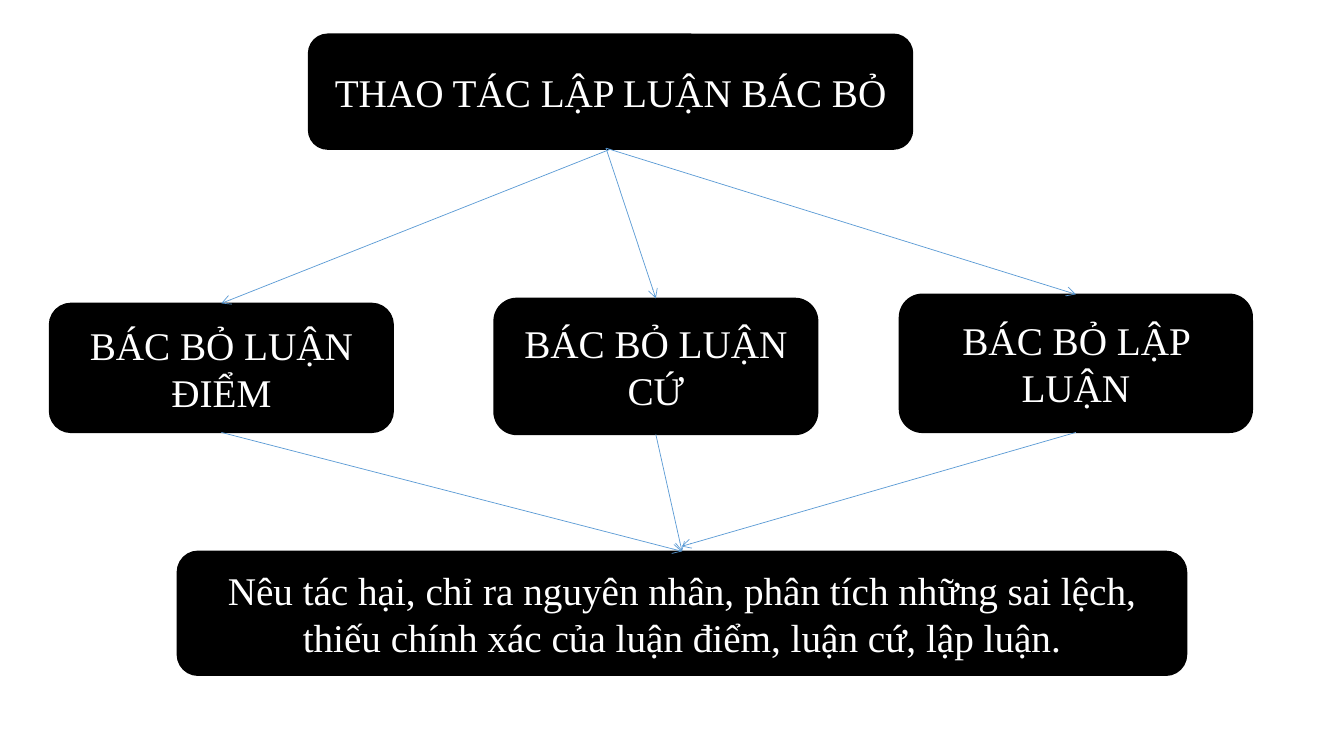
"""Draw a diagram of the ways to refute an argument."""
from dataclasses import dataclass
from typing import Any, Optional

from lxml.etree import SubElement
from pptx import Presentation
from pptx.dml.color import RGBColor
from pptx.enum.shapes import MSO_CONNECTOR, MSO_SHAPE
from pptx.enum.text import MSO_ANCHOR, PP_ALIGN
from pptx.oxml.ns import qn
from pptx.util import Inches, Pt

WIDTH, HEIGHT = Inches(13.33), Inches(7.5)
TOP, BOTTOM = 0, 2


@dataclass(frozen=True)
class Theme:
    box: RGBColor = RGBColor(0x00, 0x00, 0x00)
    text: RGBColor = RGBColor(0xFF, 0xFF, 0xFF)
    arrow: RGBColor = RGBColor(0x5B, 0x9B, 0xD5)
    font: str = "Times New Roman"
    size: Pt = Pt(28)
    border: Pt = Pt(1)
    stroke: Pt = Pt(0.5)


@dataclass(frozen=True)
class Box:
    name: str
    text: str
    left: float
    top: float
    width: float
    height: float


@dataclass(frozen=True)
class Link:
    source: str
    target: str
    free_start: Optional[tuple[float, float]] = None
    free_end: Optional[tuple[float, float]] = None


THEME = Theme()
FRAME_FORMAT = {"word_wrap": True, "vertical_anchor": MSO_ANCHOR.MIDDLE}
FONT_FORMAT = {"name": THEME.font, "size": THEME.size}

BOXES = [
    Box("root", "THAO TÁC LẬP LUẬN BÁC BỎ", 22.96, 4.53, 44.94, 15.2),
    Box("thesis", "BÁC BỎ LUẬN ĐIỂM", 3.68, 40.13, 25.58, 17.07),
    Box("evidence", "BÁC BỎ LUẬN CỨ", 36.76, 39.47, 24.08, 18),
    Box("reasoning", "BÁC BỎ LẬP LUẬN", 66.92, 38.93, 26.26, 18.27),
    Box("method", "Nêu tác hại, chỉ ra nguyên nhân, phân tích những sai lệch, "
        "thiếu chính xác của luận điểm, luận cứ, lập luận.",
        13.2, 72.93, 75.09, 16.4),
]
FORK = (45.09, 19.6)
LINKS = [
    Link("root", "thesis"),
    Link("root", "evidence", free_start=FORK),
    Link("root", "reasoning", free_start=FORK),
    Link("thesis", "method"),
    Link("evidence", "method"),
    Link("reasoning", "method", free_end=(50.71, 72.27)),
]


def place(x: float, y: float) -> tuple[int, int]:
    """Turn percentages of the slide into lengths."""
    return round(WIDTH * x / 100), round(HEIGHT * y / 100)


def apply(obj: Any, values: dict[str, Any]) -> None:
    """Set each named attribute on an object."""
    for name, value in values.items():
        setattr(obj, name, value)


def draw_box(s: Any, box: Box) -> Any:
    """Add a rounded box with centred text."""
    sp = s.shapes.add_shape(MSO_SHAPE.ROUNDED_RECTANGLE,
                            *place(box.left, box.top),
                            *place(box.width, box.height))
    sp.shadow.inherit = False
    sp.fill.solid()
    sp.fill.fore_color.rgb = THEME.box
    sp.line.color.rgb = THEME.box
    sp.line.width = THEME.border
    tf = sp.text_frame
    apply(tf, FRAME_FORMAT)
    p = tf.paragraphs[0]
    p.alignment = PP_ALIGN.CENTER
    r = p.add_run()
    r.text = box.text
    apply(r.font, FONT_FORMAT)
    r.font.color.rgb = THEME.text
    return sp


def draw_link(s: Any, link: Link, shapes: dict[str, Any]) -> None:
    """Add an arrow, joined to its boxes except at free ends."""
    cxn = s.shapes.add_connector(MSO_CONNECTOR.STRAIGHT,
                                 *place(*(link.free_start or (0, 0))),
                                 *place(*(link.free_end or (0, 0))))
    if link.free_start is None:
        cxn.begin_connect(shapes[link.source], BOTTOM)
    if link.free_end is None:
        cxn.end_connect(shapes[link.target], TOP)
    cxn.line.color.rgb = THEME.arrow
    cxn.line.width = THEME.stroke
    SubElement(cxn.line._get_or_add_ln(), qn("a:tailEnd"), type="arrow")
    SubElement(cxn._element.spPr, qn("a:effectLst"))


def main() -> None:
    """Build and save the slide."""
    prs = Presentation()
    apply(prs, {"slide_width": WIDTH, "slide_height": HEIGHT})
    s = prs.slides.add_slide(prs.slide_layouts[6])
    shapes = {box.name: draw_box(s, box) for box in BOXES}
    for link in LINKS:
        draw_link(s, link, shapes)
    prs.save("out.pptx")


if __name__ == "__main__":
    main()
